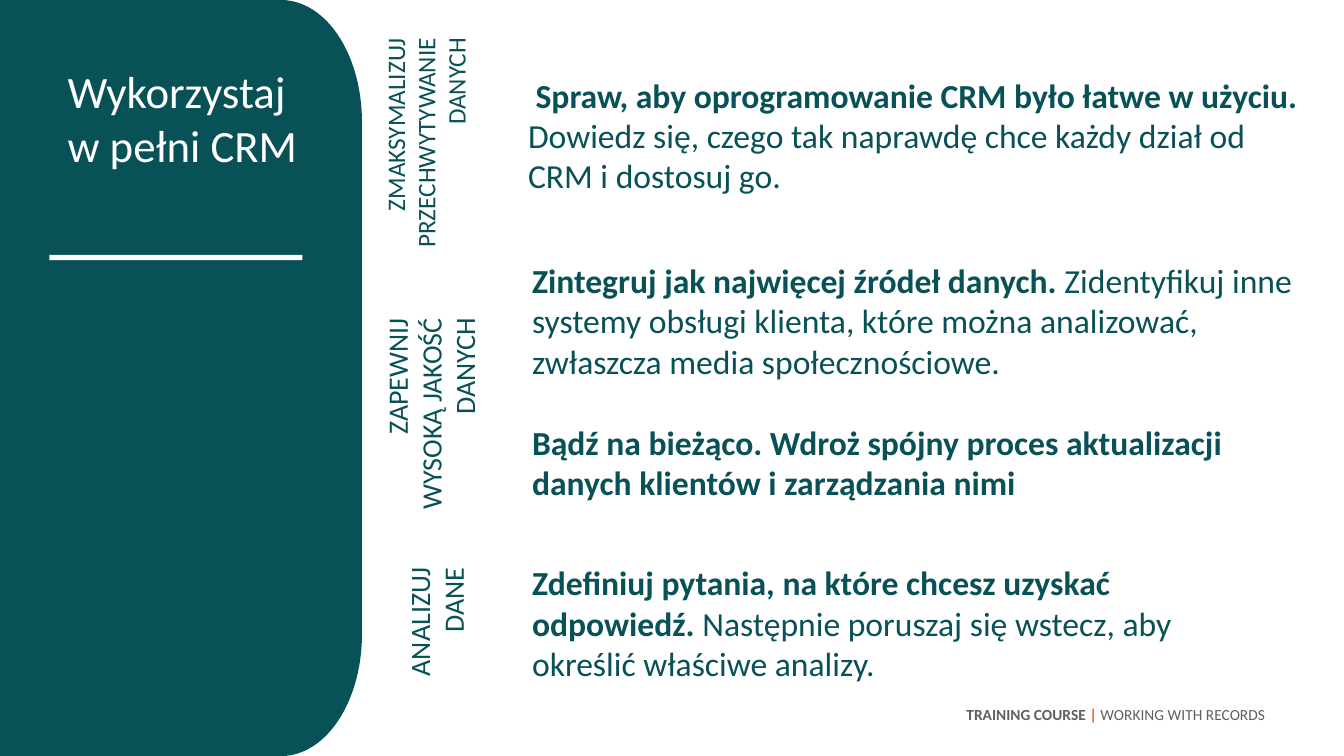
from pptx import Presentation
from pptx.dml.color import RGBColor
from pptx.enum.shapes import MSO_SHAPE as SHAPE
from pptx.enum.text import MSO_ANCHOR as ANCHOR, MSO_AUTO_SIZE as AUTO, PP_ALIGN as ALIGN
from pptx.util import Inches, Pt

WIDTH, HEIGHT = Inches(13.33), Inches(7.5)
TEAL, WHITE, GREY, ORANGE = "085156", "FFFFFF", "615F5D", "F15A2A"

LABELS = [
    ("ZMAKSYMALIZUJ PRZECHWYTYWANIE DANYCH", 18, (27.9, 3.73, 7.58, 33.73)),
    ("ZAPEWNIJ WYSOKĄ JAKOŚĆ DANYCH", 20, (27.9, 40.8, 8.33, 28.67)),
    ("ANALIZUJ DANE", 20, (29.55, 73.73, 5.78, 24.93)),
]
TIPS = [
    ((38.55, 9.2, 58.8, 17.47), [
        [(" Spraw, aby oprogramowanie CRM było łatwe w użyciu. ", True),
         ("Dowiedz się, czego tak naprawdę chce każdy dział od CRM i dostosuj go.", False)],
    ]),
    ((38.85, 33.73, 58.5, 39.07), [
        [("Zintegruj jak najwięcej źródeł danych. ", True),
         ("Zidentyfikuj inne systemy obsługi klienta, które można analizować, "
          "zwłaszcza media społecznościowe.", False)],
        [("Bądź na bieżąco. Wdroż spójny proces aktualizacji danych klientów "
          "i zarządzania nimi", True)],
    ]),
    ((38.85, 73.73, 56.4, 17.47), [
        [("Zdefiniuj pytania, na które chcesz uzyskać odpowiedź.", True),
         (" Następnie poruszaj się wstecz, aby określić właściwe analizy.", False)],
    ]),
]


def color(value):
    return RGBColor.from_string(value)


def frame(box):
    left, top, width, height = box
    return (round(WIDTH * left / 100), round(HEIGHT * top / 100),
            round(WIDTH * width / 100), round(HEIGHT * height / 100))


def turn(sp):
    dx = (sp.width - sp.height) // 2
    sp.left, sp.top = sp.left + dx, sp.top - dx
    sp.width, sp.height = sp.height, sp.width
    sp.rotation = 270


def add_block(s, kind, box, fill):
    sp = s.shapes.add_shape(kind, *frame(box))
    sp.shadow.inherit = False
    sp.fill.solid()
    sp.fill.fore_color.rgb = color(fill)
    sp.line.fill.background()
    return sp


def add_run(p, text, size=24, fill=TEAL, bold=False):
    r = p.add_run()
    r.text = text
    r.font.name = "Calibri"
    r.font.size = Pt(size)
    r.font.bold = bold
    r.font.color.rgb = color(fill)


def write(sp, paragraphs, size=24, fill=TEAL, align=ALIGN.LEFT, gap=29):
    tf = sp.text_frame
    tf.word_wrap = True
    tf.auto_size = AUTO.NONE
    tf.vertical_anchor = ANCHOR.TOP
    for i, runs in enumerate(paragraphs):
        p = tf.add_paragraph() if i else tf.paragraphs[0]
        p.alignment = align
        p.space_before = Pt(gap if i else 0)
        for text, bold, *own in runs:
            add_run(p, text, size, own[0] if own else fill, bold)


def add_text(s, box, paragraphs, **style):
    sp = s.shapes.add_textbox(*frame(box))
    write(sp, paragraphs, **style)
    return sp


def set_title(s, box, text):
    sp = s.shapes.title
    sp.left, sp.top, sp.width, sp.height = frame(box)
    write(sp, [[(text, False)]], size=32, fill=WHITE)
    sp.element.getparent().append(sp.element)


def main():
    prs = Presentation()
    prs.slide_width, prs.slide_height = WIDTH, HEIGHT
    s = prs.slides.add_slide(prs.slide_layouts[5])

    add_block(s, SHAPE.RECTANGLE, (0, 0, 21, 100), TEAL)
    turn(add_block(s, SHAPE.FLOWCHART_TERMINATOR, (14.93, 0, 12, 100), TEAL))
    add_block(s, SHAPE.RECTANGLE, (3.68, 33.73, 18.83, 0.67), WHITE)
    set_title(s, (4.28, 7.73, 20.48, 15.73), "Wykorzystaj w pełni CRM")

    for text, size, box in LABELS:
        turn(add_text(s, box, [[(text, False)]], size=size, align=ALIGN.RIGHT))
    for box, paragraphs in TIPS:
        add_text(s, box, paragraphs)
    add_text(s, (4.28, 92.67, 90.6, 6), [[
        ("TRAINING COURSE ", True), ("|", True, ORANGE),
        (" WORKING WITH RECORDS", False),
    ]], size=11, fill=GREY, align=ALIGN.RIGHT)

    prs.save("out.pptx")


if __name__ == "__main__":
    main()
